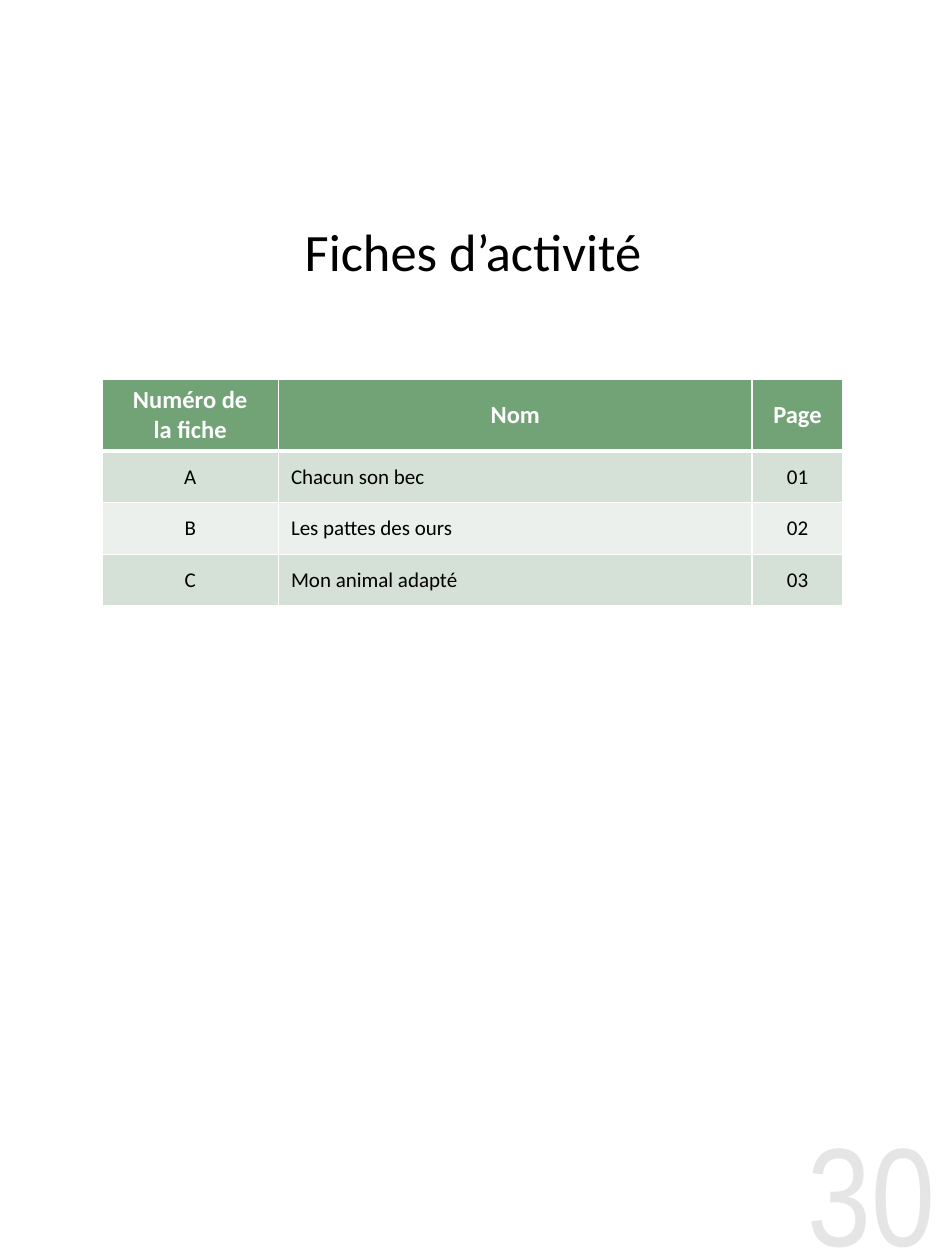
from lxml.etree import SubElement
from pptx import Presentation
from pptx.dml.color import RGBColor as RGB
from pptx.enum.shapes import MSO_SHAPE as Shape
from pptx.enum.text import MSO_ANCHOR as Anchor, PP_ALIGN as Align
from pptx.oxml.ns import qn
from pptx.util import Inches, Pt

HEX = {"white": "FFFFFF", "black": "000000", "green": "72A376",
       "dark": "D5E0D6", "light": "EBF0EC", "gray": "E5E5E5"}
COLS = [1.4, 3.76, 0.72]
HEIGHTS = [0.57, 0.41, 0.41, 0.41]
ROWS = [
    ["Numéro de\nla fiche", "Nom", "Page"],
    ["A", "Chacun son bec", "01"],
    ["B", "Les pattes des ours", "02"],
    ["C", "Mon animal adapté", "03"],
]


def paint(item, color):
    item.fill.solid()
    item.fill.fore_color.rgb = RGB.from_string(HEX[color])


def write(frame, text, size, color, align=Align.CENTER, bold=False,
          face="Calibri"):
    frame.text = text
    for para in frame.paragraphs:
        para.alignment = align
        for run in para.runs:
            font = run.font
            font.name, font.size, font.bold = face, Pt(size), bold
            font.color.rgb = RGB.from_string(HEX[color])


def edge(cell, base):
    """Draw white cell borders, with the bottom one base points wide."""
    props = cell._tc.get_or_add_tcPr()
    sides = [("L", 1), ("R", 1), ("T", 1), ("B", base)]
    for spot, (side, width) in enumerate(sides):
        line = SubElement(props, qn(f"a:ln{side}"), w=str(Pt(width)))
        fill = SubElement(line, qn("a:solidFill"))
        SubElement(fill, qn("a:srgbClr"), val=HEX["white"])
        props.insert(spot, line)


def add_list(slide):
    grid = slide.shapes.add_table(
        len(ROWS), len(COLS), Inches(0.81), Inches(3.01),
        Inches(sum(COLS)), Inches(sum(HEIGHTS))).table
    for col, width in zip(grid.columns, COLS):
        col.width = Inches(width)
    for r, (row, texts) in enumerate(zip(grid.rows, ROWS)):
        row.height = Inches(HEIGHTS[r])
        head = r == 0
        shade = "green" if head else "dark" if r % 2 else "light"
        for c, (cell, text) in enumerate(zip(row.cells, texts)):
            align = Align.LEFT if c == 1 and not head else Align.CENTER
            paint(cell, shade)
            edge(cell, 3 if head else 1)
            cell.vertical_anchor = Anchor.MIDDLE
            write(cell.text_frame, text, 14 if head else 12,
                  "white" if head else "black", align, head)


def add_title(slide):
    box = slide.shapes.add_shape(
        Shape.RECTANGLE, Inches(2.15), Inches(1.67), Inches(3.21), Inches(0.64))
    box.shadow.inherit = False
    paint(box, "white")
    box.line.fill.background()
    frame = box.text_frame
    frame.word_wrap = True
    frame.vertical_anchor = Anchor.MIDDLE
    write(frame, "Fiches d’activité", 30, "black")


def add_folio(slide):
    box = slide.shapes.add_textbox(
        Inches(5.9), Inches(8.78), Inches(1.52), Inches(1.22))
    frame = box.text_frame
    frame.word_wrap = True
    frame.margin_left = frame.margin_right = 0
    frame.margin_top = frame.margin_bottom = 0
    write(frame, "30", 80, "gray", Align.RIGHT, face="Arial Narrow")


def main():
    deck = Presentation()
    deck.slide_width, deck.slide_height = Inches(7.5), Inches(10)
    slide = deck.slides.add_slide(deck.slide_layouts[6])
    add_folio(slide)
    add_list(slide)
    add_title(slide)
    deck.save("out.pptx")


if __name__ == "__main__":
    main()
